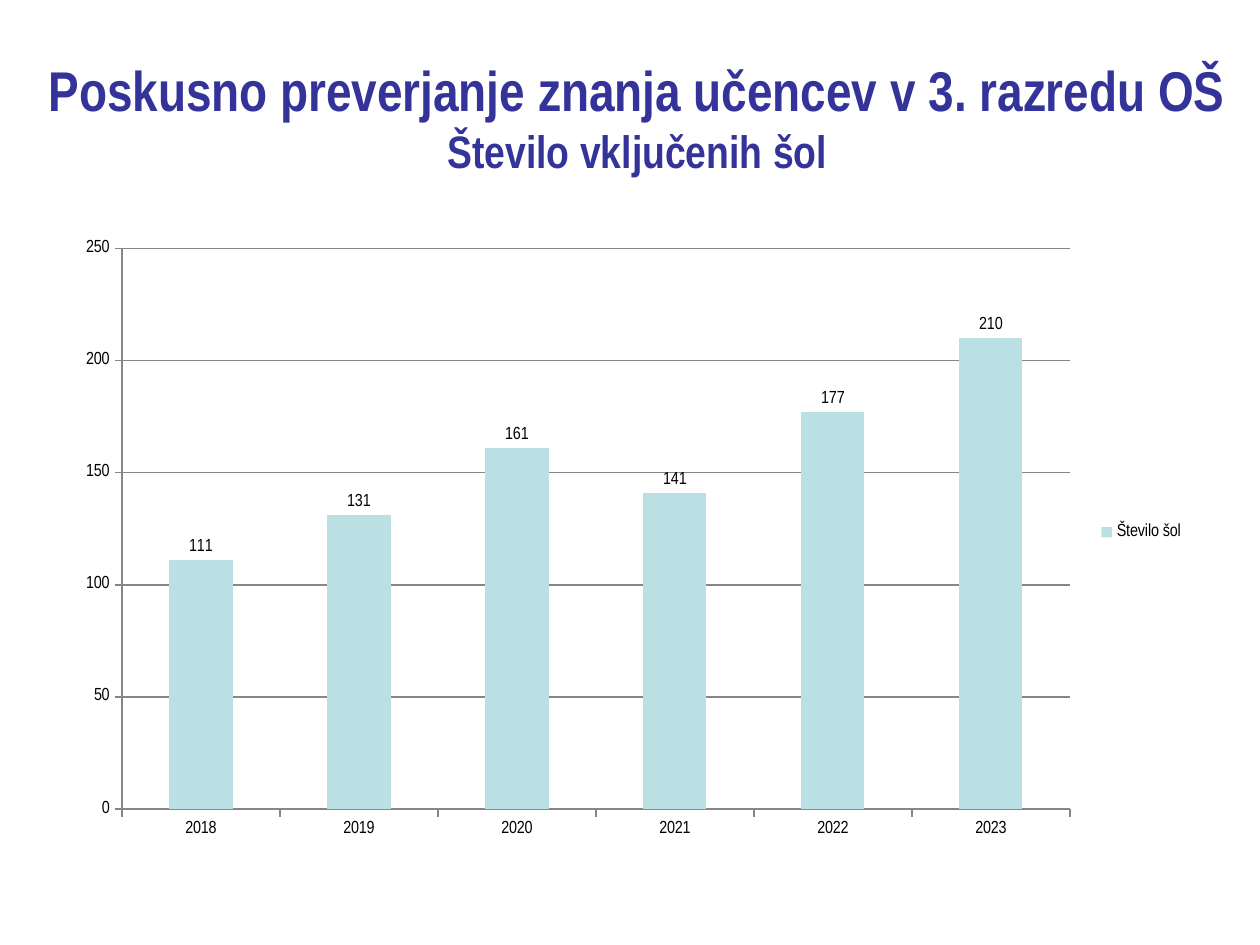
from dataclasses import dataclass

from lxml import etree
from pptx import Presentation
from pptx.chart.data import CategoryChartData
from pptx.dml.color import RGBColor
from pptx.enum.chart import XL_CHART_TYPE, XL_LABEL_POSITION, XL_LEGEND_POSITION, XL_TICK_MARK
from pptx.enum.text import MSO_ANCHOR, PP_ALIGN
from pptx.oxml.ns import qn
from pptx.util import Inches, Pt

COLUMN = XL_CHART_TYPE.COLUMN_CLUSTERED
LABEL_ABOVE = XL_LABEL_POSITION.OUTSIDE_END
LEGEND_RIGHT = XL_LEGEND_POSITION.RIGHT
TICK_OUT, TICK_NONE = XL_TICK_MARK.OUTSIDE, XL_TICK_MARK.NONE
MIDDLE = MSO_ANCHOR.MIDDLE
CENTER = PP_ALIGN.CENTER

FONT = "Arial Narrow"
NAVY, BLACK, GRAY, PALE_TEAL = "333399", "000000", "868686", "BBE0E3"


@dataclass
class TitleLine:
    text: str
    size: float


@dataclass
class SchoolCount:
    year: str
    schools: int


TITLE = [
    TitleLine("Poskusno preverjanje znanja učencev v 3. razredu OŠ", 32),
    TitleLine("Število vključenih šol", 26),
]
COUNTS = [
    SchoolCount("2018", 111),
    SchoolCount("2019", 131),
    SchoolCount("2020", 161),
    SchoolCount("2021", 141),
    SchoolCount("2022", 177),
    SchoolCount("2023", 210),
]
PLOT_LAYOUT = {"x": 0.052, "y": 0.045, "w": 0.836, "h": 0.899}


def rgb(value: str) -> RGBColor:
    return RGBColor.from_string(value)


def add_text(p, text: str, *, size: float, color: str, bold: bool = False) -> None:
    r = p.add_run()
    r.text = text
    r.font.name = FONT
    r.font.size = Pt(size)
    r.font.bold = bold
    r.font.color.rgb = rgb(color)


def add_title(slide, lines: list[TitleLine]) -> None:
    sp = slide.shapes.add_textbox(Inches(0), Inches(0.3), Inches(10.12), Inches(1.25))
    tf = sp.text_frame
    tf.word_wrap = True
    tf.vertical_anchor = MIDDLE
    p = tf.paragraphs[0]
    p.alignment = CENTER
    for i, line in enumerate(lines):
        if i:
            p.add_line_break()
        add_text(p, line.text, size=line.size, color=NAVY, bold=True)


def set_plot_layout(chart, box: dict[str, float]) -> None:
    plot_area = chart._chartSpace.chart.plotArea
    for old in plot_area.findall(qn("c:layout")):
        plot_area.remove(old)
    layout = etree.Element(qn("c:layout"))
    manual = etree.SubElement(layout, qn("c:manualLayout"))
    settings = {"layoutTarget": "inner", "xMode": "edge", "yMode": "edge", **box}
    for tag, value in settings.items():
        etree.SubElement(manual, qn(f"c:{tag}"), val=str(value))
    plot_area.insert(0, layout)


def style_line(line) -> None:
    line.color.rgb = rgb(GRAY)
    line.width = Pt(0.75)


def add_school_chart(slide, counts: list[SchoolCount]) -> None:
    data = CategoryChartData()
    data.categories = [c.year for c in counts]
    data.add_series("Število šol", [c.schools for c in counts])
    chart = slide.shapes.add_chart(
        COLUMN, Inches(0.5), Inches(1.75), Inches(9), Inches(4.95), data
    ).chart
    chart.has_title = False
    chart.font.name = FONT
    chart.font.size = Pt(10)
    chart.font.color.rgb = rgb(BLACK)
    set_plot_layout(chart, PLOT_LAYOUT)

    # Axes and gridlines
    for axis in (chart.category_axis, chart.value_axis):
        axis.major_tick_mark = TICK_OUT
        axis.minor_tick_mark = TICK_NONE
        style_line(axis.format.line)
    value_axis = chart.value_axis
    value_axis.minimum_scale, value_axis.maximum_scale = 0, 250
    value_axis.major_unit = 50
    value_axis.has_major_gridlines = True
    style_line(value_axis.major_gridlines.format.line)

    # Columns and their values
    plot = chart.plots[0]
    plot.gap_width = 150
    plot.vary_by_categories = False
    series = plot.series[0]
    series.format.fill.solid()
    series.format.fill.fore_color.rgb = rgb(PALE_TEAL)
    series.data_labels.show_value = True
    series.data_labels.position = LABEL_ABOVE

    # Legend
    chart.has_legend = True
    chart.legend.position = LEGEND_RIGHT
    chart.legend.include_in_layout = False


def main() -> None:
    prs = Presentation()
    prs.slide_width, prs.slide_height = Inches(10), Inches(7.5)
    slide = prs.slides.add_slide(prs.slide_layouts[6])
    add_title(slide, TITLE)
    add_school_chart(slide, COUNTS)
    prs.save("out.pptx")


if __name__ == "__main__":
    main()
